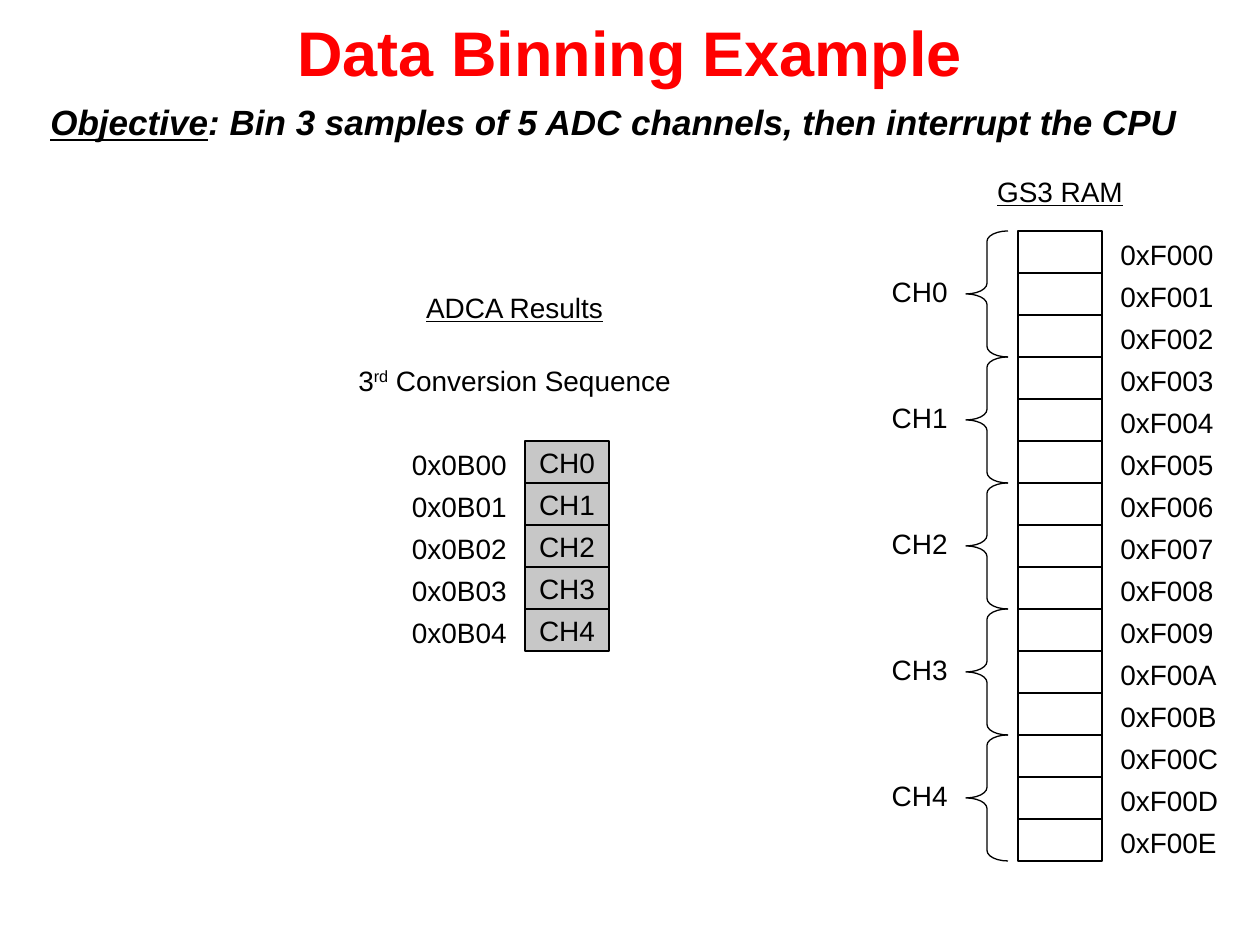
from pptx import Presentation
from pptx.dml.color import RGBColor
from pptx.enum.shapes import MSO_SHAPE
from pptx.enum.text import MSO_ANCHOR, MSO_AUTO_SIZE, PP_ALIGN
from pptx.util import Emu, Pt

EMU_PER_PX = 914400 / 126
CELL_WIDTH, CELL_HEIGHT = 84, 42
LABEL_HEIGHT = 47
RAM_TOP, RESULTS_TOP = 231, 441
CHANNELS, SAMPLES = 5, 3
BLACK, RED, GREY = "000000", "FF0000", "C7C7C7"
BODY = {"name": "Arial", "size": Pt(16)}
HEADING = {**BODY, "underline": True}
TITLE = {"name": "Arial", "size": Pt(36), "bold": True}
OBJECTIVE = {"name": "Arial", "size": Pt(20), "bold": True, "italic": True}


def px(*lengths):
    """Turn pixel lengths into EMU."""
    return [Emu(round(length * EMU_PER_PX)) for length in lengths]


def paint(color_format, hex_color):
    """Give a colour format an RGB value."""
    color_format.rgb = RGBColor.from_string(hex_color)


def add_run(paragraph, text, style, color=BLACK, baseline=None):
    """Add a formatted run, raised by baseline thousandths of a percent."""
    run = paragraph.add_run()
    run.text = text
    for attribute, value in style.items():
        setattr(run.font, attribute, value)
    paint(run.font.color, color)
    if baseline:
        run._r.get_or_add_rPr().set("baseline", str(baseline))


def add_label(slide, box, text="", align=PP_ALIGN.LEFT, style=BODY):
    """Add a wrapped text box and return its paragraph."""
    label = slide.shapes.add_textbox(*px(*box))
    label.text_frame.word_wrap = True
    label.text_frame.auto_size = MSO_AUTO_SIZE.SHAPE_TO_FIT_TEXT
    paragraph = label.text_frame.paragraphs[0]
    paragraph.alignment = align
    if text:
        add_run(paragraph, text, style)
    return paragraph


def add_outline(slide, preset, box, fill=None):
    """Add a preset shape with a thin black line."""
    outline = slide.shapes.add_shape(preset, *px(*box))
    outline.shadow.inherit = False
    outline.line.width = Pt(0.75)
    paint(outline.line.color, BLACK)
    if fill:
        outline.fill.solid()
        paint(outline.fill.fore_color, fill)
    else:
        outline.fill.background()
    return outline


def add_cell(slide, left, top, text="", fill=None):
    """Add one memory cell with an optional centred name."""
    cell = add_outline(slide, MSO_SHAPE.RECTANGLE, (left, top, CELL_WIDTH, CELL_HEIGHT), fill)
    if text:
        cell.text_frame.word_wrap = False
        cell.text_frame.vertical_anchor = MSO_ANCHOR.MIDDLE
        paragraph = cell.text_frame.paragraphs[0]
        paragraph.alignment = PP_ALIGN.CENTER
        add_run(paragraph, text, BODY)


def add_title(slide, text):
    """Place and format the title placeholder."""
    title = slide.shapes.title
    title.left, title.top, title.width, title.height = px(0, 0, 1260, 102)
    title.text_frame.auto_size = MSO_AUTO_SIZE.NONE
    title.text_frame.vertical_anchor = MSO_ANCHOR.MIDDLE
    paragraph = title.text_frame.paragraphs[0]
    paragraph.alignment = PP_ALIGN.CENTER
    add_run(paragraph, text, TITLE, RED)


def add_objective(slide):
    """Add the objective line with its underlined lead word."""
    objective = add_label(slide, (38, 101, 1174, 48))
    objective.line_spacing = 0.85
    add_run(objective, "Objective", {**OBJECTIVE, "underline": True})
    add_run(objective, ": Bin 3 samples of 5 ADC channels, then interrupt the CPU", OBJECTIVE)


def add_results(slide):
    """Add the ADC result registers with their addresses."""
    add_label(slide, (316, 284, 397, LABEL_HEIGHT), "ADCA Results", PP_ALIGN.CENTER, HEADING)
    sequence = add_label(slide, (336, 357, 357, LABEL_HEIGHT), align=PP_ALIGN.CENTER)
    add_run(sequence, "3", BODY)
    add_run(sequence, "rd", BODY, baseline=30000)
    add_run(sequence, " Conversion Sequence", BODY)
    for channel in range(CHANNELS):
        top = RESULTS_TOP + channel * CELL_HEIGHT
        add_label(slide, (388, top, 131, LABEL_HEIGHT), f"0x0B{channel:02X}", PP_ALIGN.RIGHT)
        add_cell(slide, 525, top, f"CH{channel}", GREY)


def add_ram(slide):
    """Add the RAM column, its addresses and the channel braces."""
    add_label(slide, (976, 168, 168, LABEL_HEIGHT), "GS3 RAM", PP_ALIGN.CENTER, HEADING)
    for word in range(CHANNELS * SAMPLES):
        top = RAM_TOP + word * CELL_HEIGHT
        add_cell(slide, 1018, top)
        add_label(slide, (1108, top, 131, LABEL_HEIGHT), f"0xF{word:03X}")
    bin_height = SAMPLES * CELL_HEIGHT
    for channel in range(CHANNELS):
        top = RAM_TOP + channel * bin_height
        brace = add_outline(slide, MSO_SHAPE.LEFT_BRACE, (966, top, 42, bin_height))
        brace.adjustments[0] = 0.25
        add_label(slide, (872, top + 37, 88, LABEL_HEIGHT), f"CH{channel}", PP_ALIGN.RIGHT)


def main():
    """Build and save the data binning slide."""
    presentation = Presentation()
    presentation.slide_width, presentation.slide_height = px(1260, 945)
    slide = presentation.slides.add_slide(presentation.slide_layouts[5])
    add_title(slide, "Data Binning Example")
    add_objective(slide)
    add_results(slide)
    add_ram(slide)
    presentation.save("out.pptx")


if __name__ == "__main__":
    main()
